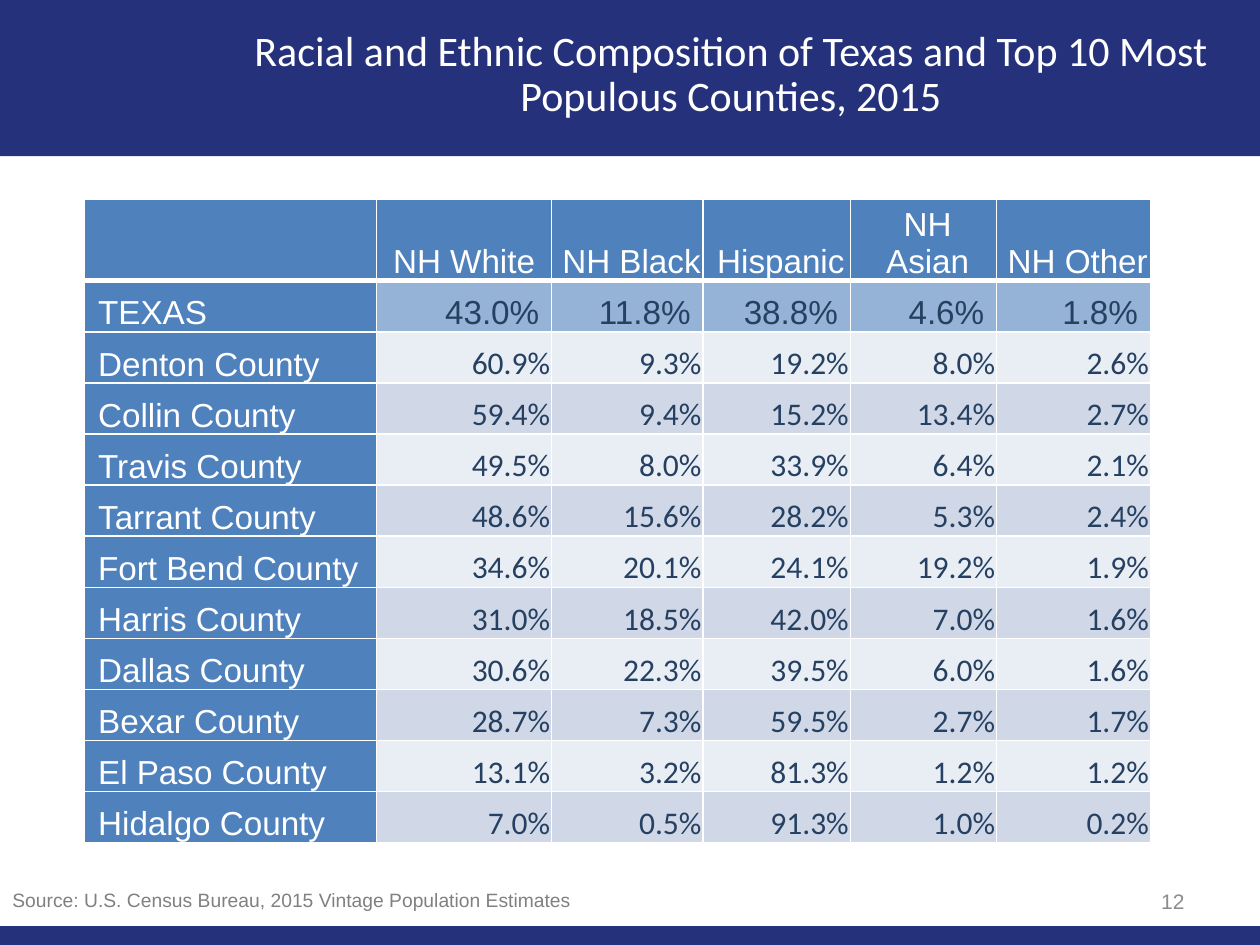
from dataclasses import dataclass
from typing import Any

from lxml import etree
from pptx import Presentation
from pptx.dml.color import RGBColor
from pptx.enum.shapes import MSO_SHAPE
from pptx.enum.text import MSO_ANCHOR, PP_ALIGN
from pptx.oxml.ns import qn
from pptx.util import Cm, Pt

RECTANGLE = MSO_SHAPE.RECTANGLE
LEFT, CENTER, RIGHT = PP_ALIGN.LEFT, PP_ALIGN.CENTER, PP_ALIGN.RIGHT
TOP, MIDDLE, BOTTOM = MSO_ANCHOR.TOP, MSO_ANCHOR.MIDDLE, MSO_ANCHOR.BOTTOM


@dataclass(frozen=True)
class Theme:
    navy: str = "25327B"
    blue: str = "4F81BD"
    state: str = "95B3D7"
    bands: tuple[str, str] = ("E9EDF4", "D0D8E8")
    white: str = "FFFFFF"
    figure: str = "254061"
    source: str = "808080"
    number: str = "8C8C8C"
    heading_font: str = "Calibri"
    body_font: str = "Arial"
    title_size: float = 24
    label_size: float = 19
    figure_size: float = 18
    source_size: float = 11
    number_size: float = 12


@dataclass(frozen=True)
class Area:
    """A rectangle on the page, in centimetres."""
    left: float
    top: float
    width: float
    height: float

    def lengths(self) -> tuple[Cm, Cm, Cm, Cm]:
        return Cm(self.left), Cm(self.top), Cm(self.width), Cm(self.height)


@dataclass(frozen=True)
class Place:
    name: str
    shares: tuple[float, ...]


THEME = Theme()
PAGE_WIDTH, PAGE_HEIGHT = 25.4, 19.05
BARS = (Area(0, 0, PAGE_WIDTH, 3.15), Area(0, 18.67, PAGE_WIDTH, 0.38))
TITLE_AREA = Area(4.32, 0.25, 20.83, 2.54)
SOURCE_AREA = Area(0, 17.78, 22.23, 0.74)
NUMBER_AREA = Area(18.21, 17.65, 5.92, 1.02)
TABLE_LEFT, TABLE_TOP = 1.7, 4.01
COLUMN_WIDTHS = (5.89, 3.53, 3.05, 2.97, 2.95, 3.1)
HEADER_HEIGHT, ROW_HEIGHT = 1.65, 1.03
THIN_INSET, HEADER_INSET, STATE_INSET = 0.03, 0.2, 0.25
THIN_LINE, HEADER_LINE = 1, 3

GROUPS = ("NH White", "NH Black", "Hispanic", "NH Asian", "NH Other")
PLACES = (
    Place("TEXAS", (43.0, 11.8, 38.8, 4.6, 1.8)),
    Place("Denton County", (60.9, 9.3, 19.2, 8.0, 2.6)),
    Place("Collin County", (59.4, 9.4, 15.2, 13.4, 2.7)),
    Place("Travis County", (49.5, 8.0, 33.9, 6.4, 2.1)),
    Place("Tarrant County", (48.6, 15.6, 28.2, 5.3, 2.4)),
    Place("Fort Bend County", (34.6, 20.1, 24.1, 19.2, 1.9)),
    Place("Harris County", (31.0, 18.5, 42.0, 7.0, 1.6)),
    Place("Dallas County", (30.6, 22.3, 39.5, 6.0, 1.6)),
    Place("Bexar County", (28.7, 7.3, 59.5, 2.7, 1.7)),
    Place("El Paso County", (13.1, 3.2, 81.3, 1.2, 1.2)),
    Place("Hidalgo County", (7.0, 0.5, 91.3, 1.0, 0.2)),
)


def write(frame: Any, text: str, *, size: float, color: str,
          font: str = THEME.body_font, align: PP_ALIGN = LEFT,
          space_before: float = 0, line_spacing: float = 1.0) -> None:
    para = frame.paragraphs[0]
    para.alignment = align
    para.space_before = Pt(space_before)
    para.line_spacing = line_spacing
    para.font.size = Pt(size)
    if text:
        span = para.add_run()
        span.text = text
        span.font.name = font
        span.font.size = Pt(size)
        span.font.bold = False
        span.font.color.rgb = RGBColor.from_string(color)


def add_bar(page: Any, area: Area) -> None:
    bar = page.shapes.add_shape(RECTANGLE, *area.lengths())
    bar.shadow.inherit = False
    bar.fill.solid()
    bar.fill.fore_color.rgb = RGBColor.from_string(THEME.navy)
    bar.line.fill.background()


def place_title(page: Any, text: str) -> None:
    title = page.shapes.title
    title.left, title.top, title.width, title.height = TITLE_AREA.lengths()
    title.text_frame.word_wrap = True
    title.text_frame.vertical_anchor = MIDDLE
    write(title.text_frame, text, size=THEME.title_size, color=THEME.white,
          font=THEME.heading_font, align=CENTER, line_spacing=0.9)
    # The title must stand in front of the top bar.
    page.shapes.element.append(title.element)


def add_note(page: Any, area: Area, text: str, anchor: MSO_ANCHOR = TOP,
             **text_format: Any) -> None:
    box = page.shapes.add_textbox(*area.lengths())
    box.text_frame.word_wrap = True
    box.text_frame.vertical_anchor = anchor
    write(box.text_frame, text, **text_format)


def set_borders(cell: Any, top: float, bottom: float) -> None:
    properties = cell._tc.get_or_add_tcPr()
    sides = {"L": THIN_LINE, "R": THIN_LINE, "T": top, "B": bottom}
    for side, width in sides.items():
        line = etree.SubElement(properties, qn(f"a:ln{side}"), w=str(Pt(width)))
        fill = etree.SubElement(line, qn("a:solidFill"))
        etree.SubElement(fill, qn("a:srgbClr"), val=THEME.white)


def fill_cell(cell: Any, text: str, fill: str, *, left: float = THIN_INSET,
              right: float = THIN_INSET, top_line: float = THIN_LINE,
              bottom_line: float = THIN_LINE, **text_format: Any) -> None:
    set_borders(cell, top_line, bottom_line)
    cell.fill.solid()
    cell.fill.fore_color.rgb = RGBColor.from_string(fill)
    cell.vertical_anchor = BOTTOM
    cell.margin_left, cell.margin_right = Cm(left), Cm(right)
    cell.margin_top, cell.margin_bottom = Cm(THIN_INSET), Cm(0)
    write(cell.text_frame, text, **text_format)


def add_composition_table(page: Any) -> None:
    area = Area(TABLE_LEFT, TABLE_TOP, sum(COLUMN_WIDTHS),
                HEADER_HEIGHT + ROW_HEIGHT * len(PLACES))
    table = page.shapes.add_table(len(PLACES) + 1, len(COLUMN_WIDTHS),
                                  *area.lengths()).table
    table.first_row = table.horz_banding = False
    for column, width in zip(table.columns, COLUMN_WIDTHS):
        column.width = Cm(width)
    for index, row in enumerate(table.rows):
        row.height = Cm(ROW_HEIGHT if index else HEADER_HEIGHT)

    label = {"size": THEME.label_size, "color": THEME.white}
    for column, group in enumerate(("", *GROUPS)):
        fill_cell(table.cell(0, column), group, THEME.blue, align=CENTER,
                  left=HEADER_INSET if column > 1 else THIN_INSET,
                  bottom_line=HEADER_LINE, **label)

    state_figure = {"size": THEME.label_size, "right": STATE_INSET}
    county_figure = {"size": THEME.figure_size, "font": THEME.heading_font}
    for row, place in enumerate(PLACES, start=1):
        is_state = row == 1
        top_line = HEADER_LINE if is_state else THIN_LINE
        fill = THEME.state if is_state else THEME.bands[row % 2]
        figure = state_figure if is_state else county_figure
        fill_cell(table.cell(row, 0), place.name, THEME.blue, left=0.28,
                  top_line=top_line, space_before=6, **label)
        for column, share in enumerate(place.shares, start=1):
            fill_cell(table.cell(row, column), f"{share:.1f}%", fill,
                      top_line=top_line, align=RIGHT, color=THEME.figure,
                      **figure)


def main() -> None:
    deck = Presentation()
    deck.slide_width, deck.slide_height = Cm(PAGE_WIDTH), Cm(PAGE_HEIGHT)
    page = deck.slides.add_slide(deck.slide_layouts[5])
    for area in BARS:
        add_bar(page, area)
    place_title(page, "Racial and Ethnic Composition of Texas and Top 10 Most "
                      "Populous Counties, 2015")
    add_composition_table(page)
    add_note(page, SOURCE_AREA,
             "Source: U.S. Census Bureau, 2015 Vintage Population Estimates",
             size=THEME.source_size, color=THEME.source)
    add_note(page, NUMBER_AREA, "12", MIDDLE, size=THEME.number_size,
             color=THEME.number, align=RIGHT)
    deck.save("out.pptx")


if __name__ == "__main__":
    main()
